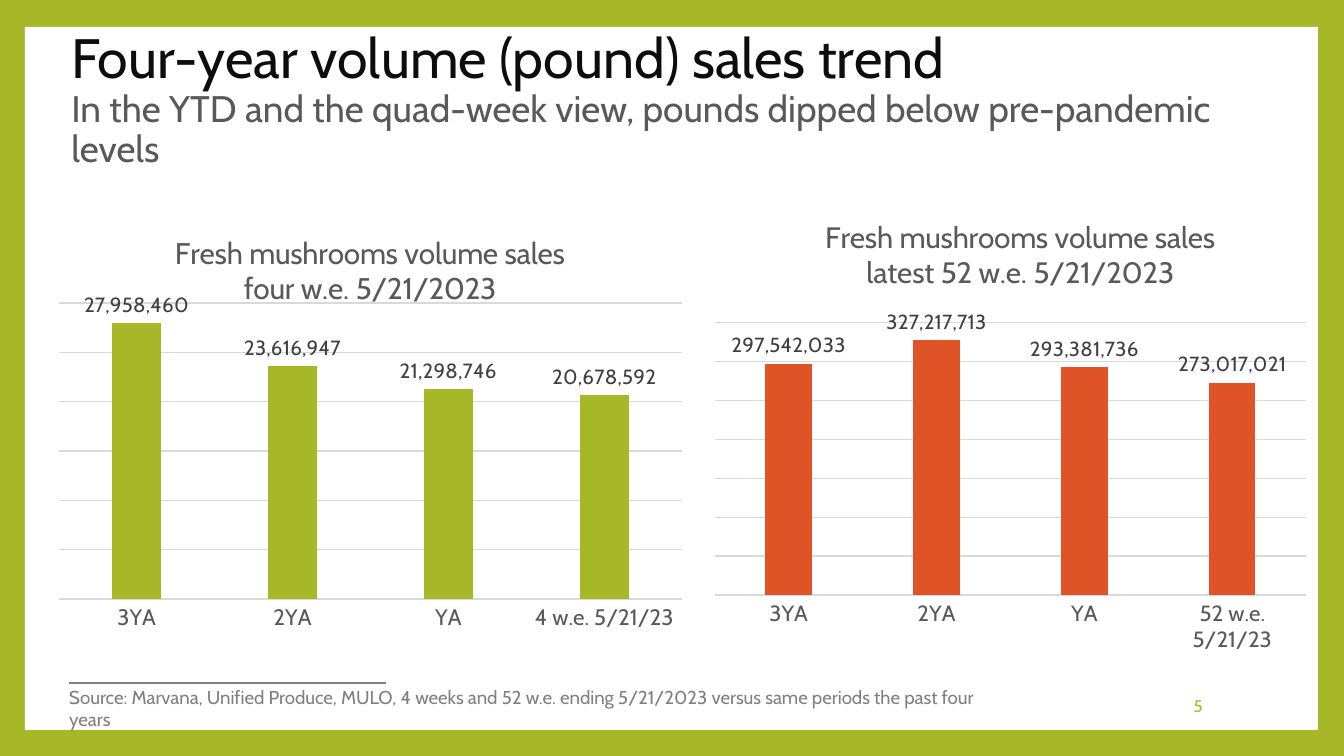
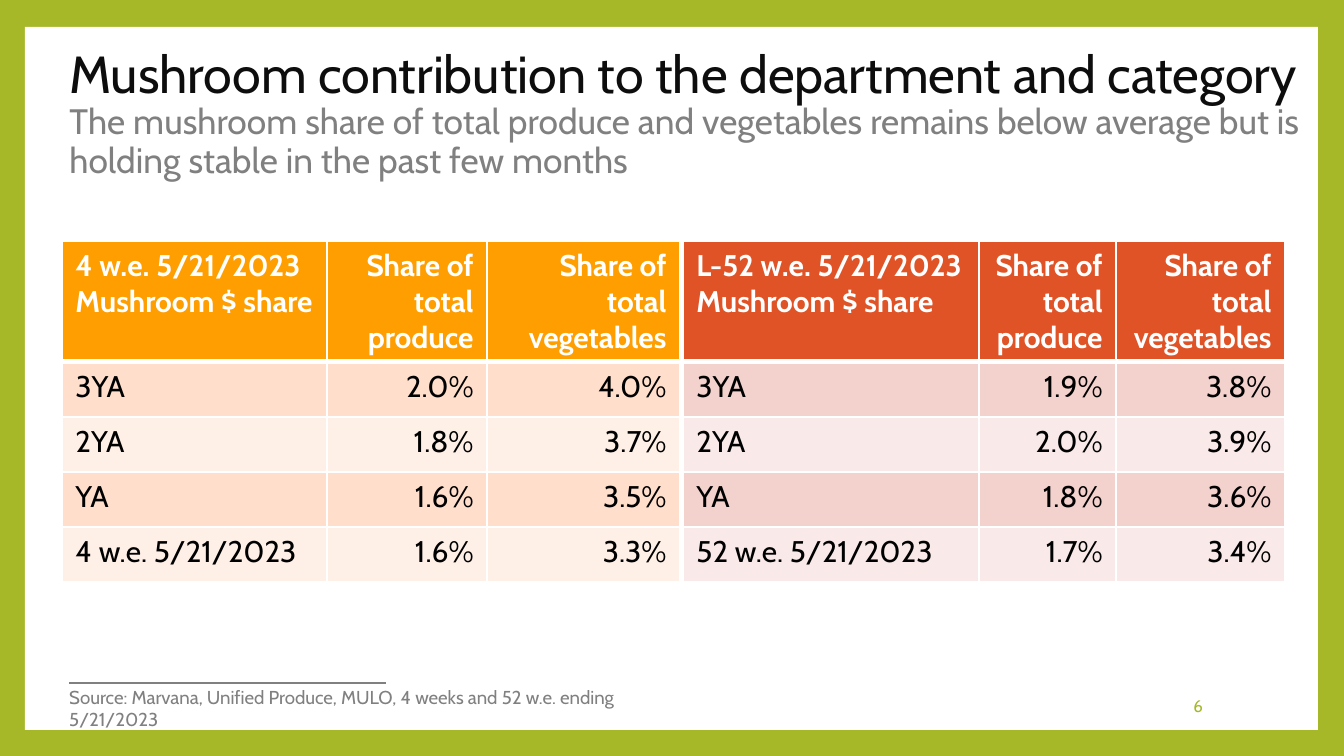
from lxml import etree
from pptx import Presentation
from pptx import util as u
from pptx.chart.data import CategoryChartData
from pptx.dml.color import RGBColor
from pptx.enum import chart as ch, shapes, text
from pptx.oxml import ns

FONT = "Cabin"
GREEN, RED, AMBER, WHITE = "A6B727", "DF5327", "FE9E00", "FFFFFF"
BLACK, INK, DARK, MID = "000000", "0D0D0D", "595959", "808080"
LABEL, GRID = "404040", "D9D9D9"
PX = 914400 / 134.4
SIZE = (1344, 756)
CARD = (25, 27, 1293, 703)
RULE = (69, 683, 386, 683)

TREND = {
    "num": 5,
    "title": ("Four-year volume (pound) sales trend\n", 29.7, INK),
    "sub": ("In the YTD and the quad-week view, pounds dipped below pre-pandemic levels", 19.8, DARK),
    "box": (58, 48, 1249, 106),
    "source": "Source: Marvana, Unified Produce, MULO, 4 weeks and 52 w.e. ending 5/21/2023 "
              "versus same periods the past four years",
    "wide": 954,
}
SHARE = {
    "num": 6,
    "title": ("Mushroom contribution to the department and category\n", 27.9, INK),
    "sub": ("The mushroom share of total produce and vegetables remains below average "
            "but is holding stable in the past few months", 18.9, MID),
    "box": (56, 78, 1288, 73),
    "source": "Source: Marvana, Unified Produce, MULO, 4 weeks and 52 w.e. ending 5/21/2023",
    "wide": 646,
}
PAST = ["3YA", "2YA", "YA"]
CHARTS = [
    {"box": (58, 208, 625, 445), "color": GREEN, "last": "4 w.e. 5/21/23",
     "title": ["Fresh mushrooms volume sales", "four w.e. 5/21/2023"],
     "head": (0.18, 0.05), "plot": (0, 0.214, 1, 0.665),
     "vals": [27958460, 23616947, 21298746, 20678592]},
    {"box": (714, 208, 593, 445), "color": RED, "last": "52 w.e. 5/21/23",
     "title": ["Fresh mushrooms volume sales", "latest 52 w.e. 5/21/2023"],
     "head": (0.18, 0.015), "plot": (0, 0.261, 1, 0.619),
     "vals": [297542033, 327217713, 293381736, 273017021]},
]
HEADS = ["Share of total produce", "Share of total vegetables"]
TABLES = [
    {"left": 62, "cols": [265, 160, 193], "fills": (AMBER, "FFDFCC", "FFF0E7"),
     "head": "4 w.e. 5/21/2023\nMushroom $ share", "last": "4 w.e. 5/21/2023",
     "vals": [("2.0%", "4.0%"), ("1.8%", "3.7%"), ("1.6%", "3.5%"), ("1.6%", "3.3%")]},
    {"left": 683, "cols": [296, 137, 169], "fills": (RED, "F3D1CD", "F9E9E8"),
     "head": "L-52 w.e. 5/21/2023\nMushroom $ share", "last": "52 w.e. 5/21/2023",
     "vals": [("1.9%", "3.8%"), ("2.0%", "3.9%"), ("1.8%", "3.6%"), ("1.7%", "3.4%")]},
]
TOP, ROWS = 241, [119, 55, 55, 55, 55]


def px(*nums):
    return [u.Emu(round(n * PX)) for n in nums]


def rgb(code):
    return RGBColor.from_string(code)


def style(font, size, color, bold=False):
    font.name, font.size, font.bold = FONT, u.Pt(size), bold
    font.color.rgb = rgb(color)


def write(par, words, size, color, bold=False):
    for i, part in enumerate(words.split("\n")):
        if i:
            par.add_line_break()
        if part:
            run = par.add_run()
            run.text = part
            style(run.font, size, color, bold)


def stroke(line, color, width):
    line.color.rgb = rgb(color)
    line.width = u.Pt(width)


def add_base(deck, layout, slide):
    fill = deck.slide_master.background.fill
    fill.solid()
    fill.fore_color.rgb = rgb(GREEN)
    card = slide.shapes.add_shape(shapes.MSO_SHAPE.RECTANGLE, *px(*CARD))
    card.shadow.inherit = False
    card.fill.solid()
    card.fill.fore_color.rgb = rgb(WHITE)
    card.line.fill.background()
    rule = slide.shapes.add_connector(shapes.MSO_CONNECTOR.STRAIGHT, *px(*RULE))
    stroke(rule.line, MID, 0.79)
    etree.SubElement(rule.element.spPr, ns.qn("a:effectLst"))
    for item in (card, rule):
        layout.shapes.element.append(item.element)


def add_text(slide, box, words, size, color):
    shape = slide.shapes.add_textbox(*px(*box))
    frame = shape.text_frame
    frame.word_wrap = True
    write(frame.paragraphs[0], words, size, color)
    return frame


def add_frame(slide, data):
    title = slide.shapes.title
    title.left, title.top, title.width, title.height = px(*data["box"])
    frame = title.text_frame
    frame.word_wrap = True
    frame.auto_size = text.MSO_AUTO_SIZE.NONE
    frame.vertical_anchor = text.MSO_ANCHOR.MIDDLE
    par = frame.paragraphs[0]
    par.alignment, par.line_spacing = text.PP_ALIGN.LEFT, 0.9
    write(par, *data["title"])
    write(par, *data["sub"])
    num = add_text(slide, (1028, 686, 188, 40), str(data["num"]), 9, GREEN)
    num.vertical_anchor = text.MSO_ANCHOR.MIDDLE
    num.paragraphs[0].alignment = text.PP_ALIGN.RIGHT
    note = add_text(slide, (56, 679, data["wide"], 36), data["source"], 10, MID)
    note.auto_size = text.MSO_AUTO_SIZE.SHAPE_TO_FIT_TEXT


def place(node, index, spots, inner=False):
    for old in node.findall(ns.qn("c:layout")):
        node.remove(old)
    layout = etree.Element(ns.qn("c:layout"))
    node.insert(index, layout)
    man = etree.SubElement(layout, ns.qn("c:manualLayout"))
    pairs = [("layoutTarget", "inner")] if inner else []
    pairs += [("xMode", "edge"), ("yMode", "edge")]
    pairs += zip("xywh", spots)
    for tag, val in pairs:
        etree.SubElement(man, ns.qn("c:" + tag)).set("val", str(val))


def add_chart(slide, spec_):
    data = CategoryChartData(number_format="#,##0")
    data.categories = PAST + [spec_["last"]]
    data.add_series("Series 1", spec_["vals"])
    kind = ch.XL_CHART_TYPE.COLUMN_CLUSTERED
    chart = slide.shapes.add_chart(kind, *px(*spec_["box"]), data).chart
    style(chart.font, 10, BLACK)
    chart.has_legend = False
    chart.has_title = True
    frame = chart.chart_title.text_frame
    for i, words in enumerate(spec_["title"]):
        par = frame.add_paragraph() if i else frame.paragraphs[0]
        style(par.font, 16, DARK)
        write(par, words, 16, DARK)
    place(chart.chart_title.element, 1, spec_["head"])
    place(chart.element.xpath("c:chart/c:plotArea")[0], 0, spec_["plot"], True)

    cat, val = chart.category_axis, chart.value_axis
    cat.major_tick_mark = ch.XL_TICK_MARK.NONE
    style(cat.tick_labels.font, 12, DARK)
    stroke(cat.format.line, GRID, 0.75)
    val.visible = False
    val.minimum_scale = 0
    val.has_major_gridlines = True
    stroke(val.major_gridlines.format.line, GRID, 0.75)

    plot = chart.plots[0]
    plot.gap_width, plot.overlap, plot.vary_by_categories = 219, -27, False
    bars = plot.series[0]
    bars.format.fill.solid()
    bars.format.fill.fore_color.rgb = rgb(spec_["color"])
    tags = bars.data_labels
    tags.show_value = True
    tags.position = ch.XL_LABEL_POSITION.OUTSIDE_END
    tags.number_format, tags.number_format_is_linked = "#,##0", False
    style(tags.font, 11, LABEL)


def edge(cell, row):
    props = cell._tc.get_or_add_tcPr()
    thick = {"T": row == 1, "B": row == 0}
    for i, side in enumerate("LRTB"):
        line = etree.Element(ns.qn("a:ln" + side))
        line.set("w", str(u.Pt(3 if thick.get(side) else 1)))
        fill = etree.SubElement(line, ns.qn("a:solidFill"))
        etree.SubElement(fill, ns.qn("a:srgbClr")).set("val", WHITE)
        props.insert(i, line)


def add_table(slide, data):
    names = PAST + [data["last"]]
    grid = [[data["head"], *HEADS]] + [[n, *v] for n, v in zip(names, data["vals"])]
    cols = data["cols"]
    box = px(data["left"], TOP, sum(cols), sum(ROWS))
    table = slide.shapes.add_table(len(ROWS), len(cols), *box).table
    for col, width in zip(table.columns, px(*cols)):
        col.width = width
    for row, height in zip(table.rows, px(*ROWS)):
        row.height = height
    head, odd, even = data["fills"]
    for r, line in enumerate(grid):
        for c, words in enumerate(line):
            cell = table.cell(r, c)
            cell.fill.solid()
            cell.fill.fore_color.rgb = rgb(head if r == 0 else odd if r % 2 else even)
            edge(cell, r)
            par = cell.text_frame.paragraphs[0]
            par.alignment = text.PP_ALIGN.RIGHT if c else text.PP_ALIGN.LEFT
            write(par, words, 16, BLACK if r else WHITE, r == 0)


def main():
    deck = Presentation()
    deck.slide_width, deck.slide_height = px(*SIZE)
    layout = deck.slide_layouts[5]
    trend, share = [deck.slides.add_slide(layout) for _ in range(2)]
    add_base(deck, layout, trend)
    add_frame(trend, TREND)
    for item in CHARTS:
        add_chart(trend, item)
    add_frame(share, SHARE)
    for item in TABLES:
        add_table(share, item)
    deck.save("out.pptx")


if __name__ == "__main__":
    main()
